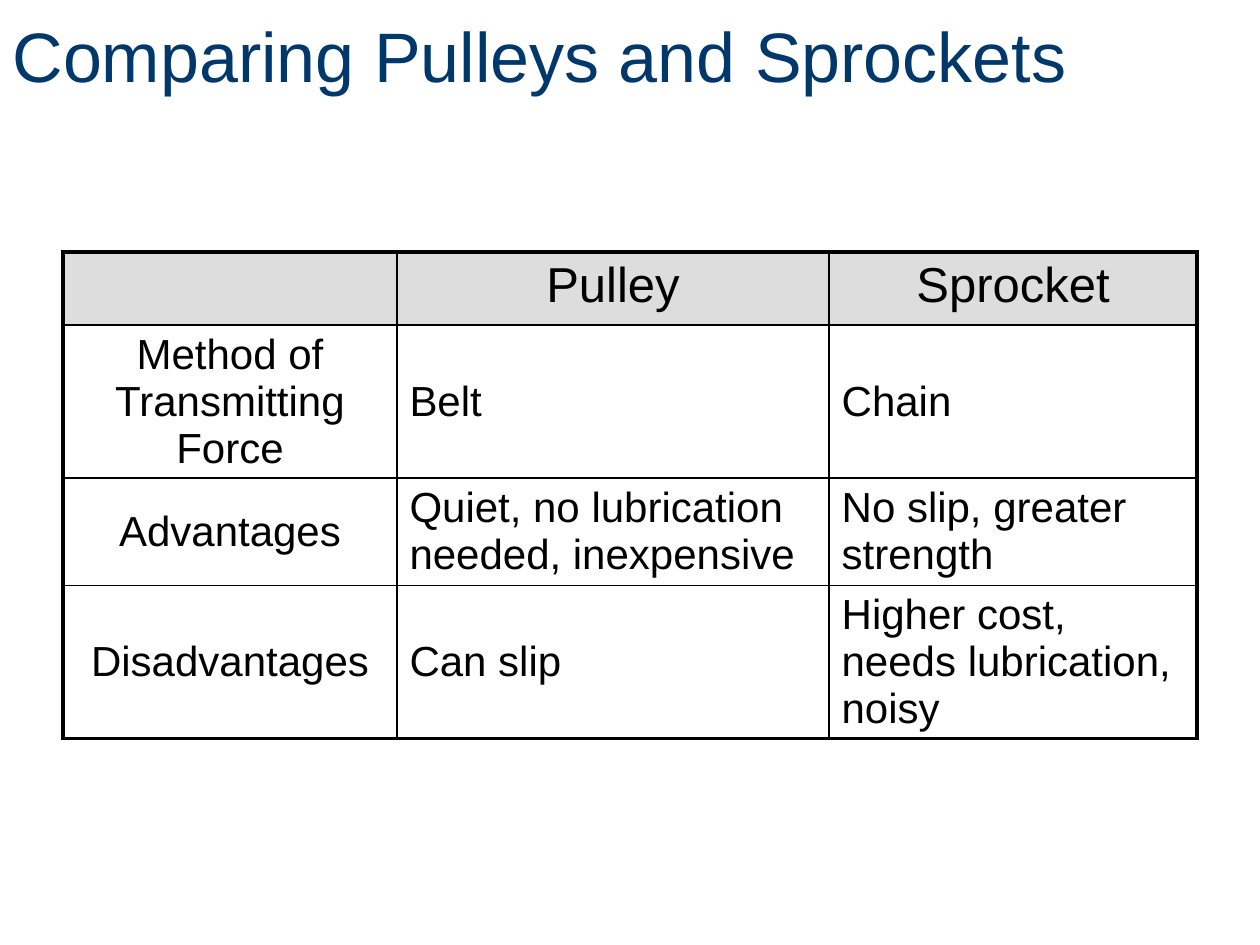
"""Build a slide that compares pulleys and sprockets in a bordered table."""
from dataclasses import dataclass

from lxml.etree import SubElement as Sub
from pptx import Presentation
from pptx.dml.color import RGBColor as Rgb
from pptx.enum.text import MSO_ANCHOR as Anchor, PP_ALIGN as Align
from pptx.oxml.ns import qn
from pptx.table import _Cell as Cell
from pptx.text.text import TextFrame as Frame
from pptx.util import Inches, Pt


@dataclass(frozen=True)
class Theme:
    font: str = "Arial"
    title: str = "00386B"
    ink: str = "000000"
    head: str = "DDDDDD"
    big: float = 40
    mid: float = 28
    body: float = 24
    thick: float = 2.25
    thin: float = 1


@dataclass(frozen=True)
class Row:
    high: float
    texts: tuple[str, str, str]


LOOK = Theme()
COLS = (2.65, 3.43, 2.92)
ROWS = (
    Row(0.58, ("", "Pulley", "Sprocket")),
    Row(1.21, ("Method of Transmitting Force", "Belt", "Chain")),
    Row(0.85, ("Advantages", "Quiet, no lubrication needed, inexpensive",
               "No slip, greater strength")),
    Row(1.21, ("Disadvantages", "Can slip",
               "Higher cost, needs lubrication, noisy")),
)


def write(frame: Frame, text: str, *, size: float, color: str = LOOK.ink,
          align: Align = Align.LEFT) -> None:
    """Put one formatted run of text in a frame."""
    par = frame.paragraphs[0]
    par.alignment = align
    par.font.size = Pt(size)
    if text:
        run = par.add_run()
        run.text = text
        run.font.name = LOOK.font
        run.font.size = Pt(size)
        run.font.color.rgb = Rgb.from_string(color)


def edge(cell: Cell, side: str, outer: bool) -> None:
    """Draw one cell border, thick on the outside of the table."""
    width = Pt(LOOK.thick if outer else LOOK.thin)
    line = Sub(cell._tc.get_or_add_tcPr(), qn(f"a:ln{side}"), w=str(width))
    Sub(Sub(line, qn("a:solidFill")), qn("a:srgbClr"), val=LOOK.ink)


def fill(cell: Cell, text: str, row: int, col: int) -> None:
    """Format a cell by its place in the grid."""
    head = row == 0
    sides = {"L": col == 0, "R": col == len(COLS) - 1,
             "T": head, "B": row == len(ROWS) - 1}
    for side, outer in sides.items():
        edge(cell, side, outer)
    if head:
        cell.fill.solid()
        cell.fill.fore_color.rgb = Rgb.from_string(LOOK.head)
    else:
        cell.fill.background()
    cell.vertical_anchor = Anchor.TOP if head else Anchor.MIDDLE
    write(cell.text_frame, text, size=LOOK.mid if head else LOOK.body,
          align=Align.CENTER if head or col == 0 else Align.LEFT)


def main() -> None:
    """Make the slide and save it."""
    deck = Presentation()
    deck.slide_width, deck.slide_height = Inches(10), Inches(7.5)
    slide = deck.slides.add_slide(deck.slide_layouts[5])

    title = slide.shapes.title
    title.left, title.top = 0, 0
    title.width, title.height = Inches(9), Inches(1.25)
    title.text_frame.vertical_anchor = Anchor.TOP
    title.text_frame.margin_top = Inches(0.1)
    write(title.text_frame, "Comparing Pulleys and Sprockets",
          size=LOOK.big, color=LOOK.title)

    high = sum(row.high for row in ROWS)
    table = slide.shapes.add_table(
        len(ROWS), len(COLS), Inches(0.5), Inches(2),
        Inches(sum(COLS)), Inches(high)).table
    table.first_row = table.horz_banding = False
    for col, width in zip(table.columns, COLS):
        col.width = Inches(width)
    for r, row in enumerate(ROWS):
        table.rows[r].height = Inches(row.high)
        for c, text in enumerate(row.texts):
            fill(table.cell(r, c), text, r, c)

    deck.save("out.pptx")


if __name__ == "__main__":
    main()
